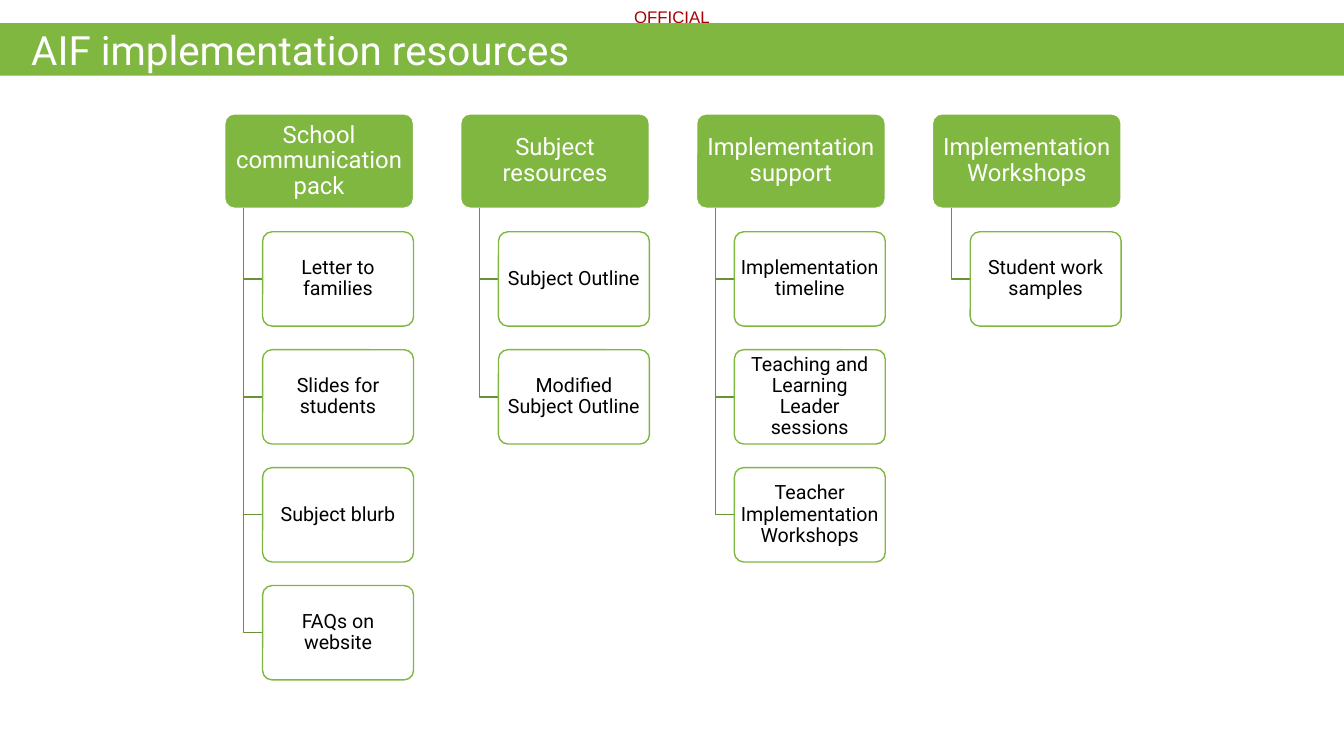
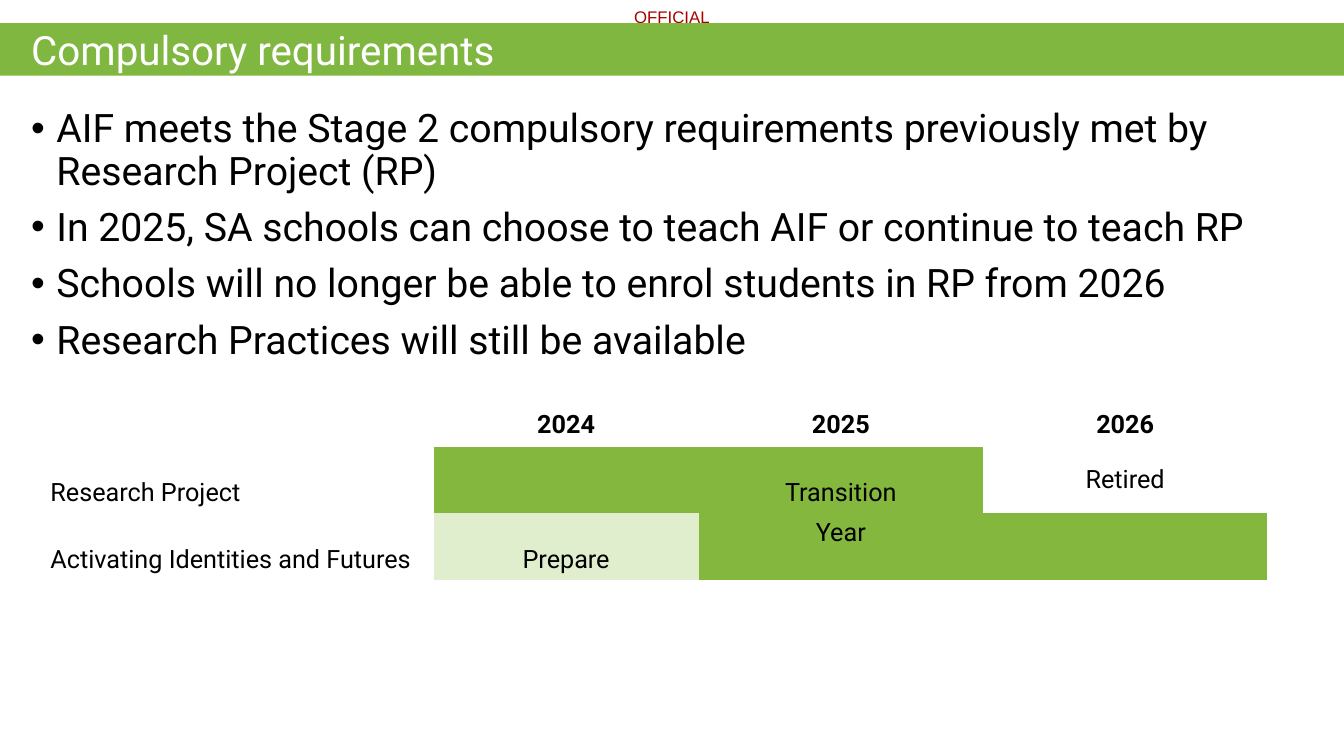
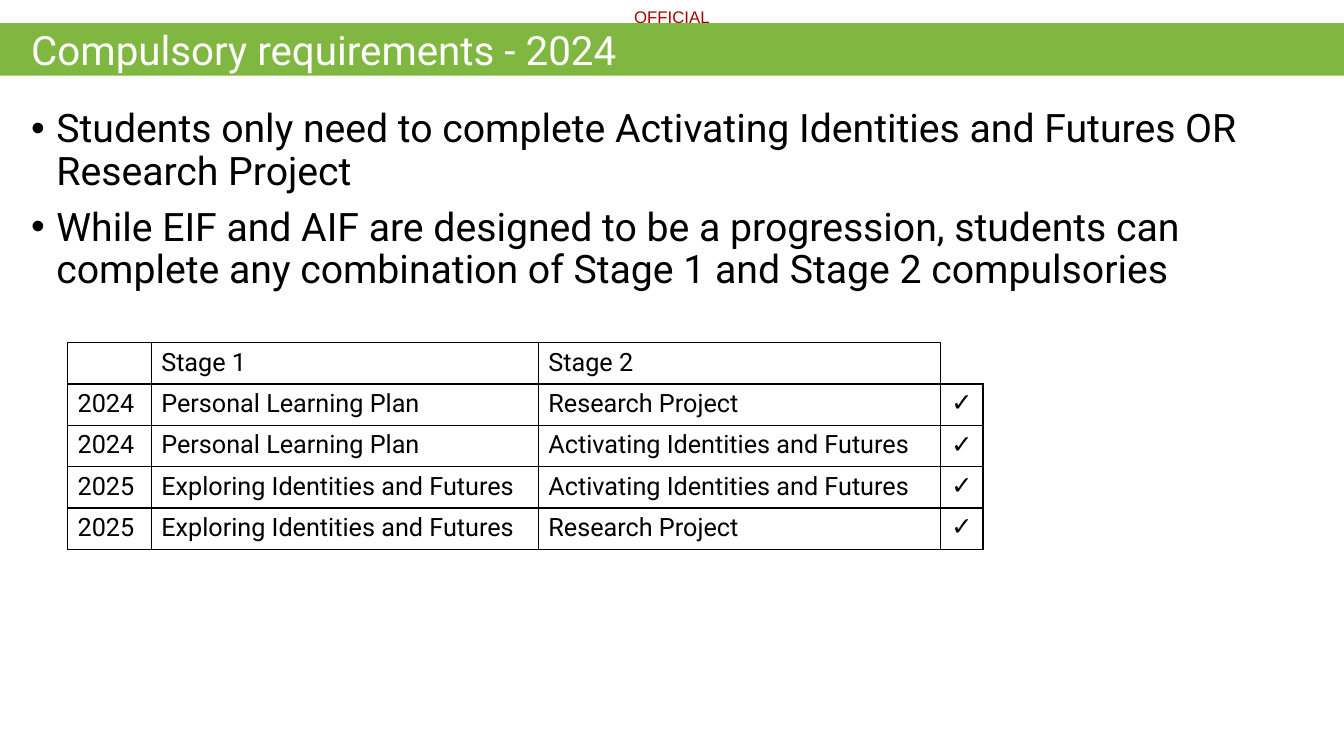
from pptx import Presentation
from pptx.dml.color import RGBColor
from pptx.enum.shapes import MSO_SHAPE
from pptx.enum.text import MSO_ANCHOR, MSO_AUTO_SIZE, PP_ALIGN
from pptx.oxml import parse_xml
from pptx.oxml.ns import nsdecls, qn
from pptx.util import Emu, Inches, Pt

GREEN = RGBColor(0x80, 0xB7, 0x40)
TABLE_GREEN = RGBColor(0x83, 0xB7, 0x3D)
PALE_GREEN = RGBColor(0xE0, 0xEE, 0xCE)
DARK_GREEN = RGBColor(0x67, 0x93, 0x33)
RED = RGBColor(0xA8, 0x00, 0x00)
BLACK = RGBColor(0x00, 0x00, 0x00)
WHITE = RGBColor(0xFF, 0xFF, 0xFF)
FONT, SYMBOL_FONT = "Roboto", "Arial"
LEFT, CENTER = PP_ALIGN.LEFT, PP_ALIGN.CENTER
TOP, MIDDLE, BOTTOM = MSO_ANCHOR.TOP, MSO_ANCHOR.MIDDLE, MSO_ANCHOR.BOTTOM
SLIDE_WIDTH, SLIDE_HEIGHT = Inches(13.33), Inches(7.5)
MARGIN_LEFT = Inches(0.21)
NO_STYLE_TABLE = "{2D5ABB26-0587-4C30-8999-92F81FD0307C}"
TITLE_ONLY, TITLE_AND_CONTENT = 5, 1

RESOURCES = {
    "School communication pack": ["Letter to families", "Slides for students",
                                  "Subject blurb", "FAQs on website"],
    "Subject resources": ["Subject Outline", "Modified Subject Outline"],
    "Implementation support": ["Implementation timeline",
                               "Teaching and Learning Leader sessions",
                               "Teacher Implementation Workshops"],
    "Implementation Workshops": ["Student work samples"],
}
# Each cell: text, alignment, anchor, fill
TRANSITION = [
    [("", LEFT, TOP, None)] + [(year, CENTER, TOP, None) for year in ("2024", "2025", "2026")],
    [("Research Project", LEFT, BOTTOM, None), ("", LEFT, TOP, TABLE_GREEN),
     ("Transition", CENTER, BOTTOM, TABLE_GREEN), ("Retired", CENTER, MIDDLE, None)],
    [("Activating Identities and Futures", LEFT, BOTTOM, None),
     ("Prepare", CENTER, BOTTOM, PALE_GREEN),
     ("Year", CENTER, TOP, TABLE_GREEN), ("", LEFT, TOP, TABLE_GREEN)],
]
PLP, RP = "Personal Learning Plan", "Research Project"
EIF, AIF = "Exploring Identities and Futures", "Activating Identities and Futures"
COMBINATIONS = [
    ("", "Stage 1", "Stage 2", ""),
    ("2024", PLP, RP, "✓"),
    ("2024", PLP, AIF, "✓"),
    ("2025", EIF, AIF, "✓"),
    ("2025", EIF, RP, "✓"),
]


def style(paragraph, size, color, align=LEFT, font=FONT, bold=False):
    paragraph.alignment = align
    paragraph.font.name = font
    paragraph.font.size = Pt(size)
    paragraph.font.color.rgb = color
    paragraph.font.bold = bold


def place(shape, left, top, width, height):
    shape.left, shape.top, shape.width, shape.height = left, top, width, height


def set_margins(frame, across, down):
    frame.margin_left = frame.margin_right = Inches(across)
    frame.margin_top = frame.margin_bottom = Inches(down)


def add_master_parts(prs, slide):
    """Draw the marking and the title band, then move them to the master."""
    marking = slide.shapes.add_textbox(Inches(6.29), Inches(0.07), Inches(0.8), Inches(0.2))
    set_margins(marking.text_frame, 0, 0)
    marking.text_frame.text = "OFFICIAL"
    style(marking.text_frame.paragraphs[0], 12, RED, font=SYMBOL_FONT)

    band = slide.shapes.add_shape(MSO_SHAPE.RECTANGLE, 0, Inches(0.23), SLIDE_WIDTH, Inches(0.52))
    band.shadow.inherit = False
    band.fill.solid()
    band.fill.fore_color.rgb = GREEN
    band.line.fill.background()

    for number, part in enumerate((marking, band), start=20):
        part.element.nvSpPr.cNvPr.set("id", str(number))
        prs.slide_master.shapes.element.append(part.element)


def add_titled_slide(prs, layout, title):
    slide = prs.slides.add_slide(prs.slide_layouts[layout])
    place(slide.shapes.title, MARGIN_LEFT, Inches(0.3), Inches(11.5), Inches(0.45))
    frame = slide.shapes.title.text_frame
    frame.text = title
    frame.auto_size = MSO_AUTO_SIZE.NONE
    frame.vertical_anchor = MIDDLE
    frame.paragraphs[0].line_spacing = 0.9
    style(frame.paragraphs[0], 28.8, WHITE)
    return slide


def fill_body(slide, height, points):
    body = slide.placeholders[1]
    place(body, MARGIN_LEFT, Inches(1.03), Inches(12.89), height)
    frame = body.text_frame
    frame.text = "\n".join(points)
    frame.auto_size = MSO_AUTO_SIZE.NONE
    for index, paragraph in enumerate(frame.paragraphs):
        properties = paragraph._p.get_or_add_pPr()
        properties.set("marL", str(Inches(0.25)))
        properties.set("indent", str(-Inches(0.25)))
        paragraph.line_spacing = 0.9
        paragraph.space_before = Pt(10 if index else 0)
        style(paragraph, 28, BLACK)


def add_card(slide, box, text, size, fill, outline, color, margin):
    card = slide.shapes.add_shape(MSO_SHAPE.ROUNDED_RECTANGLE, *box)
    card.adjustments[0] = 0.1
    card.shadow.inherit = False
    card.fill.solid()
    card.fill.fore_color.rgb = fill
    card.line.color.rgb = outline
    card.line.width = Pt(1)
    frame = card.text_frame
    frame.word_wrap = True
    frame.vertical_anchor = MIDDLE
    set_margins(frame, margin, 0.02)
    frame.text = text
    frame.paragraphs[0].line_spacing = 0.9
    style(frame.paragraphs[0], size, color, CENTER)


def add_branch(slide, trunk, start, end, tip):
    """Draw the line down the trunk and across to one item."""
    builder = slide.shapes.build_freeform(trunk, start)
    builder.add_line_segments([(trunk, end), (tip, end)], close=False)
    branch = builder.convert_to_shape()
    branch.shadow.inherit = False
    branch.fill.background()
    branch.line.color.rgb = DARK_GREEN
    branch.line.width = Pt(1)


def add_hierarchy(slide, left, top, width, groups):
    """Set the groups side by side, with gaps a quarter of a card wide."""
    card_width = Emu(int(width / (1.25 * len(groups) - 0.25)))
    card_height = card_width // 2
    for column, (heading, items) in enumerate(groups.items()):
        x = left + int(1.25 * card_width * column)
        add_card(slide, (x, top, card_width, card_height), heading, 17,
                 GREEN, WHITE, WHITE, 0.04)
        item_x = x + card_width // 5
        for row, item in enumerate(items, start=1):
            y = top + int(1.25 * card_height * row)
            add_branch(slide, x + card_width // 10, top + card_height,
                       y + card_height // 2, item_x)
            add_card(slide, (item_x, y, int(0.8 * card_width), card_height), item, 14,
                     WHITE, GREEN, BLACK, 0.03)


def add_plain_table(slide, left, top, widths, heights):
    table = slide.shapes.add_table(len(heights), len(widths), left, top,
                                   Inches(sum(widths)), Inches(sum(heights))).table
    table.first_row = table.horz_banding = False
    table._tbl.tblPr.find(qn("a:tableStyleId")).text = NO_STYLE_TABLE
    for column, width in zip(table.columns, widths):
        column.width = Inches(width)
    for row, height in zip(table.rows, heights):
        row.height = Inches(height)
    return table


def fill_cell(cell, text, align=LEFT, anchor=TOP, fill=None, font=FONT, bold=False):
    cell.text = text
    cell.vertical_anchor = anchor
    style(cell.text_frame.paragraphs[0], 18, BLACK, align, font, bold)
    if fill is None:
        cell.fill.background()
    else:
        cell.fill.solid()
        cell.fill.fore_color.rgb = fill


def set_borders(cell, sides):
    properties = cell._tc.get_or_add_tcPr()
    for index, side in enumerate(sides):
        properties.insert(index, parse_xml(
            f'<a:ln{side} {nsdecls("a")} w="{Pt(1)}"><a:solidFill>'
            f'<a:srgbClr val="{BLACK}"/></a:solidFill></a:ln{side}>'))


def add_transition_table(slide, left, top):
    table = add_plain_table(slide, left, top, [3.9, 2.63, 2.82, 2.82], [0.41, 0.66, 0.66])
    for r, row in enumerate(TRANSITION):
        for c, (text, align, anchor, fill) in enumerate(row):
            fill_cell(table.cell(r, c), text, align, anchor, fill, bold=r == 0)


def add_combinations_table(slide, left, top):
    table = add_plain_table(slide, left, top, [0.83, 3.84, 3.99, 0.42],
                            [0.41] * len(COMBINATIONS))
    tick_column = len(COMBINATIONS[0]) - 1
    for r, row in enumerate(COMBINATIONS):
        for c, text in enumerate(row):
            cell = table.cell(r, c)
            if c == tick_column:
                fill_cell(cell, text, CENTER, font=SYMBOL_FONT)
            else:
                fill_cell(cell, text)
            set_borders(cell, "LB" if (r, c) == (0, tick_column) else "LRTB")


def main():
    prs = Presentation()
    prs.slide_width, prs.slide_height = SLIDE_WIDTH, SLIDE_HEIGHT

    resources = add_titled_slide(prs, TITLE_ONLY, "AIF implementation resources")
    add_master_parts(prs, resources)
    add_hierarchy(resources, Inches(2.23), Inches(1.13), Inches(8.89), RESOURCES)

    requirements = add_titled_slide(prs, TITLE_AND_CONTENT, "Compulsory requirements")
    fill_body(requirements, Inches(2.72), [
        "AIF meets the Stage 2 compulsory requirements previously met by Research Project (RP)",
        "In 2025, SA schools can choose to teach AIF or continue to teach RP",
        "Schools will no longer be able to enrol students in RP from 2026",
        "Research Practices will still be available",
    ])
    add_transition_table(requirements, Inches(0.4), Inches(4.02))

    requirements_2024 = add_titled_slide(prs, TITLE_AND_CONTENT, "Compulsory requirements - 2024")
    fill_body(requirements_2024, Inches(4.76), [
        "Students only need to complete Activating Identities and Futures OR Research Project",
        "While EIF and AIF are designed to be a progression, students can complete "
        "any combination of Stage 1 and Stage 2 compulsories",
    ])
    add_combinations_table(requirements_2024, Inches(0.67), Inches(3.4))

    prs.save("out.pptx")


if __name__ == "__main__":
    main()
